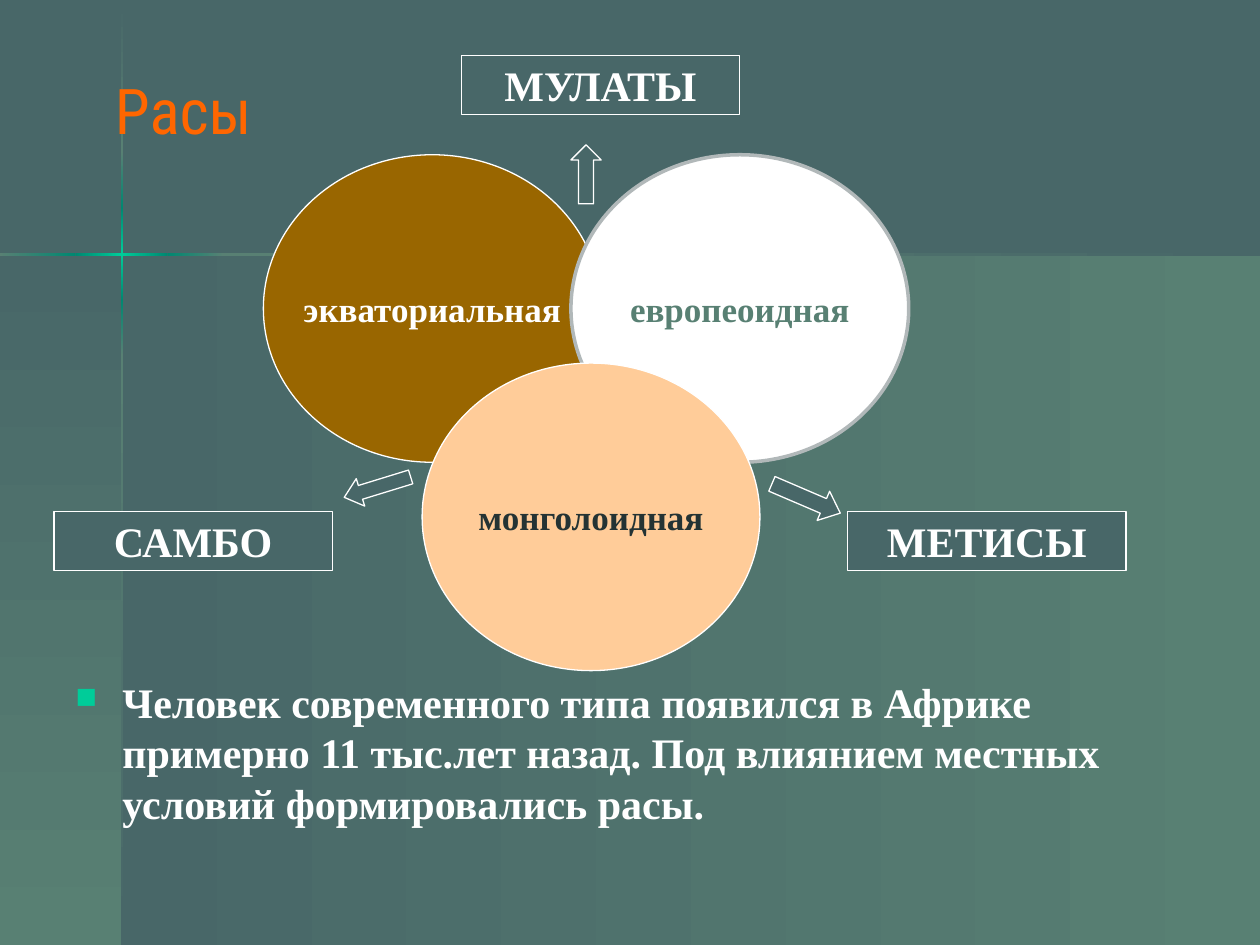
from dataclasses import dataclass
from itertools import pairwise

from lxml.etree import SubElement as Sub
from pptx import Presentation as Deck
from pptx.dml.color import RGBColor as Rgb
from pptx.enum.shapes import MSO_SHAPE as Kind
from pptx.enum.text import MSO_ANCHOR as Anchor, PP_ALIGN as Align
from pptx.oxml.ns import qn
from pptx.util import Cm, Pt


@dataclass(frozen=True)
class Theme:
    slate: str = "486768"
    moss: str = "588073"
    teal: str = "008871"
    mint: str = "00CC99"
    white: str = "FFFFFF"
    brown: str = "996600"
    peach: str = "FFCC99"
    grey: str = "B1B8B9"
    dark: str = "243334"
    orange: str = "FF6600"
    serif: str = "Times New Roman"
    sans: str = "Roboto Condensed"
    head: int = 36
    body: int = 24
    label: int = 20


@dataclass(frozen=True)
class Race:
    name: str
    x: float
    y: float
    fill: str
    ink: str
    edge: str = "FFFFFF"
    width: float = 0.75


@dataclass(frozen=True)
class Mix:
    name: str
    x: float
    y: float


@dataclass(frozen=True)
class Arrow:
    x: float
    y: float
    w: float
    h: float
    turn: float
    tip: float


T = Theme()
WIDE, HIGH = 25.4, 19.05
CROSS_X, CROSS_Y, THIN = 2.44, 5.11, 0.05

# Edges of the cross's strips, and the colours each strip runs through
GLOW = (T.teal, T.mint, T.teal)
FADE = [(T.moss, T.teal), GLOW, (T.teal, T.moss), (T.moss, T.slate)]
ACROSS = [0, 1.52, 3.38, 4.5, WIDE]
DOWN = [0.03, 3.07, 4.19, 6.05, 7.16, HIGH]

RACES = [
    Race("экваториальная", 5.31, 3.12, T.brown, T.white),
    Race("европеоидная", 11.51, 3.12, T.white, T.moss, T.grey, 2),
    Race("монголоидная", 8.51, 7.32, T.peach, T.dark),
]
MIXES = [
    Mix("САМБО", 1.09, 10.31),
    Mix("МУЛАТЫ", 9.3, 1.12),
    Mix("МЕТИСЫ", 17.09, 10.31),
]
ARROWS = [
    Arrow(11.51, 2.92, 0.61, 1.19, 0, 0.5),
    Arrow(7.32, 9.12, 0.58, 1.4, 252.9, 0.59),
    Arrow(15.93, 9.3, 0.64, 1.5, 113.2, 0.58),
]
STORY = ("Человек современного типа появился в Африке примерно 11 тыс.лет назад. "
         "Под влиянием местных условий формировались расы.")


def write(shape, text: str, *, size: int, ink: str, font: str = T.serif, bold: bool = True,
          align=Align.CENTER, anchor=Anchor.MIDDLE, wrap: bool = False):
    """Put one formatted paragraph in the shape and return it."""
    frame = shape.text_frame
    frame.word_wrap, frame.vertical_anchor = wrap, anchor
    para = frame.paragraphs[0]
    para.alignment = align
    run = para.add_run()
    run.text = text
    face = run.font
    face.name, face.size, face.bold = font, Pt(size), bold
    face.color.rgb = Rgb.from_string(ink)
    return para


def draw(slide, kind, x: float, y: float, w: float, h: float, fill: str,
         edge: str = T.white, width: float = 0.75):
    """Add a filled and outlined preset shape."""
    shape = slide.shapes.add_shape(kind, Cm(x), Cm(y), Cm(w), Cm(h))
    shape.shadow.inherit = False
    shape.fill.solid()
    shape.fill.fore_color.rgb = Rgb.from_string(fill)
    shape.line.color.rgb = Rgb.from_string(edge)
    shape.line.width = Pt(width)
    return shape


def blend(slide, x: float, y: float, w: float, h: float, tones: tuple, angle: int) -> None:
    """Add a borderless rectangle with evenly spaced gradient stops."""
    shape = draw(slide, Kind.RECTANGLE, x, y, w, h, T.slate)
    shape.line.fill.background()
    shape.fill.gradient()
    grad = shape.element.spPr.find(qn("a:gradFill"))
    for child in list(grad):
        grad.remove(child)
    stops = Sub(grad, qn("a:gsLst"))
    for i, tone in enumerate(tones):
        stop = Sub(stops, qn("a:gs"), pos=str(100000 * i // (len(tones) - 1)))
        Sub(stop, qn("a:srgbClr"), val=tone)
    Sub(grad, qn("a:lin"), ang=str(angle * 60000), scaled="0")


def scene(slide) -> None:
    """Background panels and the glowing cross."""
    slide.background.fill.solid()
    slide.background.fill.fore_color.rgb = Rgb.from_string(T.slate)
    left, top = 2.46, 5.13
    blend(slide, left, top, WIDE - left, HIGH - top, (T.slate, T.moss), 0)
    blend(slide, 0, top, left, HIGH - top, (T.slate, T.moss), 90)
    for (a, b), tones in zip(pairwise(DOWN), [(T.slate, T.moss), *FADE]):
        blend(slide, CROSS_X, a, THIN, b - a, tones, 90)
    for (a, b), tones in zip(pairwise(ACROSS), FADE):
        blend(slide, a, CROSS_Y, b - a, THIN, tones, 0)


def story(slide) -> None:
    """Bulleted text under the diagram."""
    box = slide.shapes.add_textbox(Cm(1.27), Cm(13.51), Cm(22.86), Cm(3.51))
    para = write(box, STORY, size=T.body, ink=T.white, align=Align.LEFT,
                 anchor=Anchor.TOP, wrap=True)
    para.space_before = Pt(4.8)
    props = para._p.get_or_add_pPr()
    props.set("marL", str(Cm(0.95)))
    props.set("indent", str(-Cm(0.95)))
    Sub(Sub(props, qn("a:buClr")), qn("a:srgbClr"), val=T.mint)
    Sub(props, qn("a:buSzPct"), val="70000")
    Sub(props, qn("a:buChar"), char="■")


def main() -> None:
    deck = Deck()
    deck.slide_width, deck.slide_height = Cm(WIDE), Cm(HIGH)
    slide = deck.slides.add_slide(deck.slide_layouts[5])
    scene(slide)
    story(slide)

    # Three overlapping races
    for r in RACES:
        oval = draw(slide, Kind.OVAL, r.x, r.y, 6.81, 6.2, r.fill, r.edge, r.width)
        write(oval, r.name, size=T.label, ink=r.ink)

    # Title, brought in front of the background
    title = slide.shapes.title
    title.left, title.top, title.width, title.height = Cm(1.09), Cm(1.32), Cm(5.21), Cm(1.57)
    write(title, "Расы", size=T.head, ink=T.orange, font=T.sans, bold=False, anchor=Anchor.TOP)
    slide.shapes._spTree.append(title.element)

    # Arrows to the mixed groups
    for a in ARROWS:
        arrow = draw(slide, Kind.UP_ARROW, a.x, a.y, a.w, a.h, T.slate)
        arrow.rotation = a.turn
        arrow.adjustments[0], arrow.adjustments[1] = 0.5, a.tip

    # Mixed groups
    for m in MIXES:
        box = draw(slide, Kind.RECTANGLE, m.x, m.y, 5.61, 1.19, T.slate)
        write(box, m.name, size=T.body, ink=T.white)

    deck.save("out.pptx")


if __name__ == "__main__":
    main()
